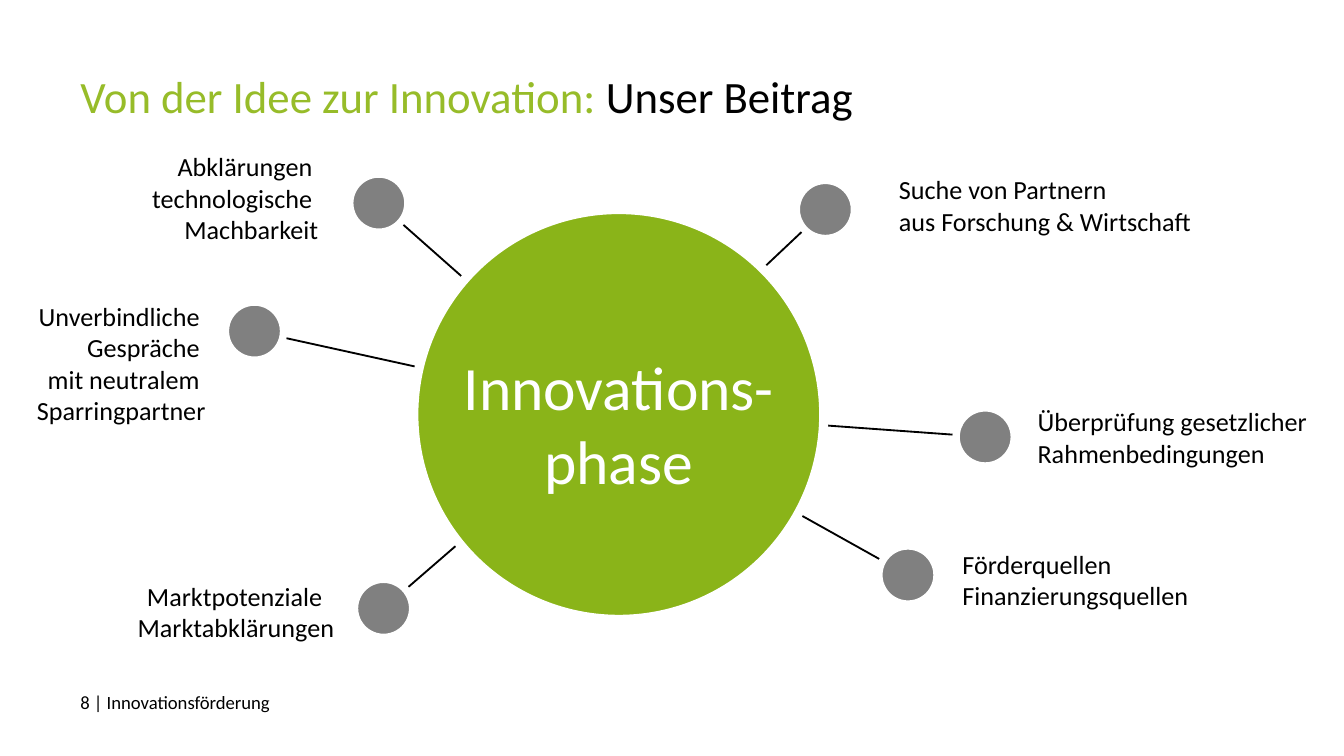
from lxml.etree import SubElement
from pptx import Presentation
from pptx.dml.color import RGBColor
from pptx.enum.shapes import MSO_CONNECTOR, MSO_SHAPE
from pptx.enum.text import MSO_ANCHOR, MSO_AUTO_SIZE, PP_ALIGN
from pptx.oxml.ns import qn
from pptx.util import Cm, Pt

BLACK, WHITE, GREY = "000000", "FFFFFF", "808080"
HUB_GREEN, TITLE_GREEN = "8AB419", "97BC29"
LEFT, RIGHT, CENTER = PP_ALIGN.LEFT, PP_ALIGN.RIGHT, PP_ALIGN.CENTER

DOT_SIZE = 1.1
HUB_BOX = (7.82, 3.96, 7.75, 7.75)
SPOKE_START = (11.58, 7.75)

# Text, alignment, label box and dot centre, all in cm
TOPICS = [
    ("Marktpotenziale  \vMarktabklärungen", RIGHT,
     (1.7, 10.97, 5.23, 1.19), (7.25, 11.5)),
    ("Unverbindliche \vGespräche \vmit neutralem \vSparringpartner", RIGHT,
     (-1.57, 5.69, 6.07, 2.34), (4.81, 6.26)),
    ("Suche von Partnern \vaus Forschung & Wirtschaft", LEFT,
     (16.38, 3.28, 9.6, 1.19), (15.6, 3.96)),
    ("Abklärungen \vtechnologische \vMachbarkeit", RIGHT,
     (0, 2.87, 6.63, 1.73), (7.16, 3.84)),
    ("Förderquellen\vFinanzierungsquellen", LEFT,
     (17.58, 10.36, 9.6, 1.19), (17.16, 10.87)),
    ("Überprüfung gesetzlicher Rahmenbedingungen", LEFT,
     (19, 7.67, 9.6, 1.19), (18.62, 8.26)),
]


def color(hex_string):
    return RGBColor.from_string(hex_string)


def lengths(values):
    return [Cm(value) for value in values]


def format_font(font, size, hex_string):
    for name, value in {"name": "Calibri", "size": Pt(size), "bold": False}.items():
        setattr(font, name, value)
    font.color.rgb = color(hex_string)


def format_frame(frame, inset_x, inset_y, anchor):
    values = {
        "margin_left": Cm(inset_x), "margin_right": Cm(inset_x),
        "margin_top": Cm(inset_y), "margin_bottom": Cm(inset_y),
        "word_wrap": True, "auto_size": MSO_AUTO_SIZE.NONE,
        "vertical_anchor": anchor,
    }
    for name, value in values.items():
        setattr(frame, name, value)


def add_title(slide, parts):
    title = slide.shapes.title
    title.left, title.top, title.width, title.height = lengths((1.27, 1.17, 22.86, 2.39))
    format_frame(title.text_frame, 0.25, 0.13, MSO_ANCHOR.TOP)
    paragraph = title.text_frame.paragraphs[0]
    paragraph.alignment = LEFT
    for text, hex_string in parts:
        run = paragraph.add_run()
        run.text = text
        format_font(run.font, 24, hex_string)


def add_text(slide, text, box, size, hex_string=BLACK, alignment=LEFT,
             insets=(0.61, 0.3), anchor=MSO_ANCHOR.TOP):
    frame = slide.shapes.add_textbox(*lengths(box)).text_frame
    format_frame(frame, *insets, anchor)
    paragraph = frame.paragraphs[0]
    paragraph.text = text
    paragraph.alignment = alignment
    for run in paragraph.runs:
        format_font(run.font, size, hex_string)


def add_circle(slide, box, fill, outline):
    shape = slide.shapes.add_shape(MSO_SHAPE.OVAL, *lengths(box))
    shape.shadow.inherit = False
    shape.fill.solid()
    shape.fill.fore_color.rgb = color(fill)
    shape.line.color.rgb = color(WHITE)
    shape.line.width = Pt(outline)


def add_spoke(slide, end):
    connector = slide.shapes.add_connector(
        MSO_CONNECTOR.STRAIGHT, *lengths(SPOKE_START + end))
    connector.line.color.rgb = color(BLACK)
    connector.line.width = Pt(1)
    SubElement(connector._element.spPr, qn("a:effectLst"))


def add_topic(slide, text, alignment, box, center):
    add_text(slide, text, box, 14, alignment=alignment, anchor=MSO_ANCHOR.MIDDLE)
    add_spoke(slide, center)
    x, y = center
    add_circle(slide, (x - DOT_SIZE / 2, y - DOT_SIZE / 2, DOT_SIZE, DOT_SIZE), GREY, 4)


def main():
    presentation = Presentation()
    presentation.slide_width, presentation.slide_height = lengths((25.4, 14.29))
    slide = presentation.slides.add_slide(presentation.slide_layouts[5])

    # Title and footer
    add_title(slide, [("Von der Idee zur Innovation:", TITLE_GREEN),
                      (" Unser Beitrag", BLACK)])
    add_text(slide, "8 | Innovationsförderung", (1.27, 12.93, 22.86, 1.2), 10,
             insets=(0.25, 0.13))

    # Topics around the hub
    for topic in TOPICS:
        add_topic(slide, *topic)

    # Hub on top of the spokes
    add_circle(slide, HUB_BOX, HUB_GREEN, 5)
    add_text(slide, "Innovations-\vphase", (7.67, 6.3, 8.05, 2.92), 33, WHITE, CENTER)

    presentation.save("out.pptx")


if __name__ == "__main__":
    main()
